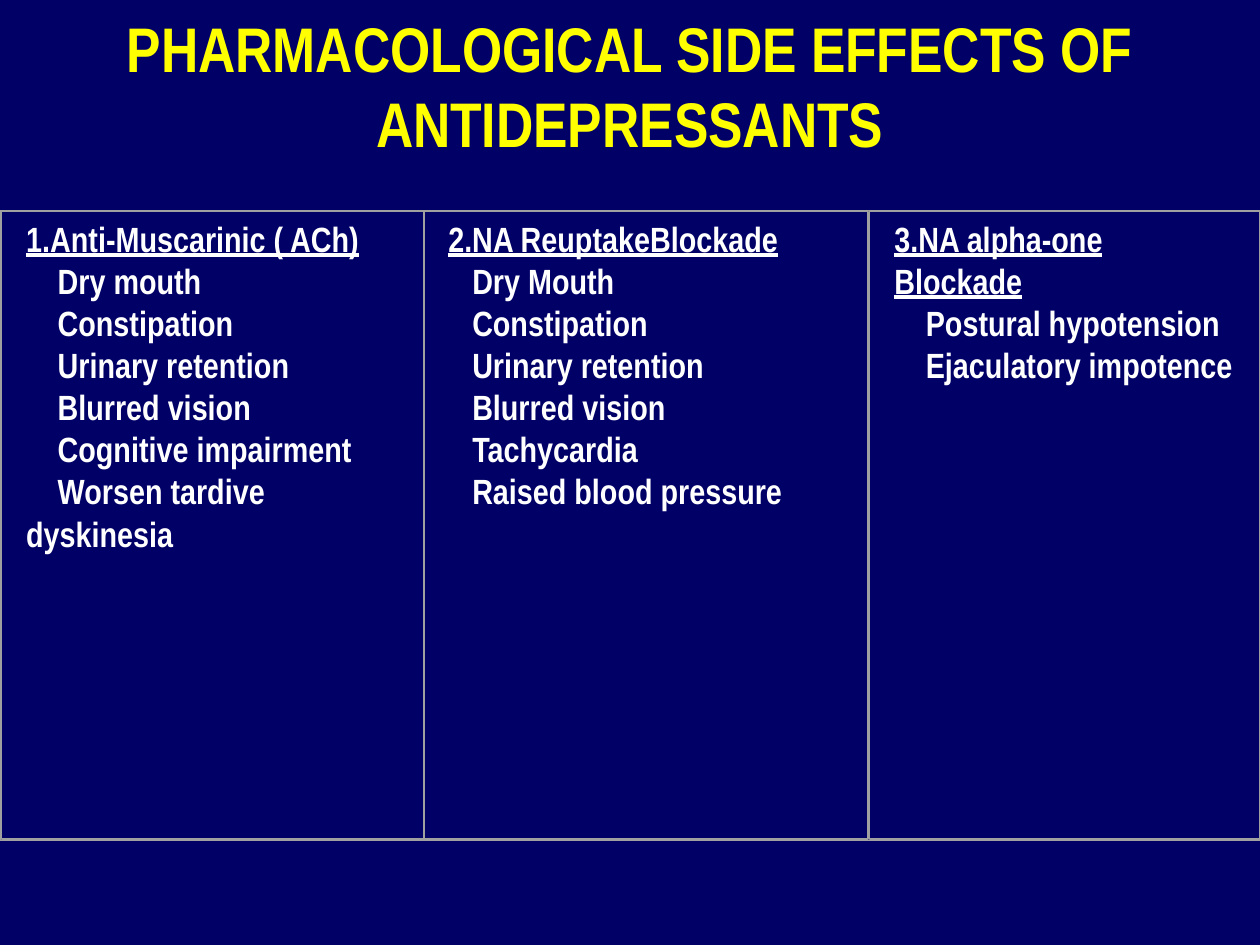
from pptx import Presentation
from pptx.dml.color import RGBColor
from pptx.enum.shapes import MSO_SHAPE
from pptx.enum.text import MSO_ANCHOR, PP_ALIGN
from pptx.util import Inches, Pt

COLORS = {"background": "000066", "title": "FFFF00", "text": "FFFFFF", "border": "A0A0A0"}
FONT = "Arial Narrow"
TOP, HEIGHT = 1.68, 4.98
PADDING = 0.1

COLUMNS = [
    (0.01, 3.36, 0.25, "1.Anti-Muscarinic ( ACh)",
     ["Dry mouth", "Constipation", "Urinary retention", "Blurred vision",
      "Cognitive impairment", "Worsen tardive dyskinesia"]),
    (3.36, 3.53, 0.19, "2.NA ReuptakeBlockade",
     ["Dry Mouth", "Constipation", "Urinary retention", "Blurred vision",
      "Tachycardia", "Raised blood pressure"]),
    (6.9, 3.1, 0.25, "3.NA alpha-one Blockade",
     ["Postural hypotension", "Ejaculatory impotence"]),
]


def color(name):
    return RGBColor.from_string(COLORS[name])


def write(p, text, size=20, fill="text", underline=False, align=PP_ALIGN.LEFT, indent=0):
    p.alignment = align
    if indent:
        p._p.get_or_add_pPr().set("indent", str(Inches(indent)))
    r = p.add_run()
    r.text = text
    r.font.name = FONT
    r.font.size = Pt(size)
    r.font.bold = True
    r.font.underline = underline
    r.font.color.rgb = color(fill)


class Deck:
    def __init__(self, width, height):
        self.prs = Presentation()
        self.prs.slide_width, self.prs.slide_height = Inches(width), Inches(height)
        self.s = self.prs.slides.add_slide(self.prs.slide_layouts[6])
        self.s.background.fill.solid()
        self.s.background.fill.fore_color.rgb = color("background")

    def text_frame(self, shapes, x, y, w, h):
        sp = shapes.add_textbox(Inches(x), Inches(y), Inches(w), Inches(h))
        tf = sp.text_frame
        tf.word_wrap = True
        return tf

    def title(self, text):
        tf = self.text_frame(self.s.shapes, 0, 0.17, 10, 1.5)
        tf.vertical_anchor = MSO_ANCHOR.MIDDLE
        tf.margin_bottom = Inches(0.54)
        write(tf.paragraphs[0], text, size=36, fill="title", align=PP_ALIGN.CENTER)

    def frame(self, shapes, x, y, w, h, weight=0):
        sp = shapes.add_shape(MSO_SHAPE.RECTANGLE, Inches(x), Inches(y), Inches(w), Inches(h))
        sp.shadow.inherit = False
        sp.fill.background()
        sp.line.color.rgb = color("border")
        sp.line.width = Pt(weight)

    def column(self, shapes, x, w, indent, heading, effects):
        tf = self.text_frame(shapes, x + PADDING, TOP, w - 2 * PADDING, HEIGHT)
        write(tf.paragraphs[0], heading, underline=True)
        for effect in effects:
            write(tf.add_paragraph(), effect, indent=indent)
        self.frame(shapes, x, TOP, w, HEIGHT)


def main():
    deck = Deck(10, 7.5)
    deck.title("PHARMACOLOGICAL SIDE EFFECTS OF ANTIDEPRESSANTS")
    group = deck.s.shapes.add_group_shape()
    for column in COLUMNS:
        deck.column(group.shapes, *column)
    deck.frame(group.shapes, 0, 1.67, 10, 5, weight=0.75)
    deck.prs.save("out.pptx")


if __name__ == "__main__":
    main()
